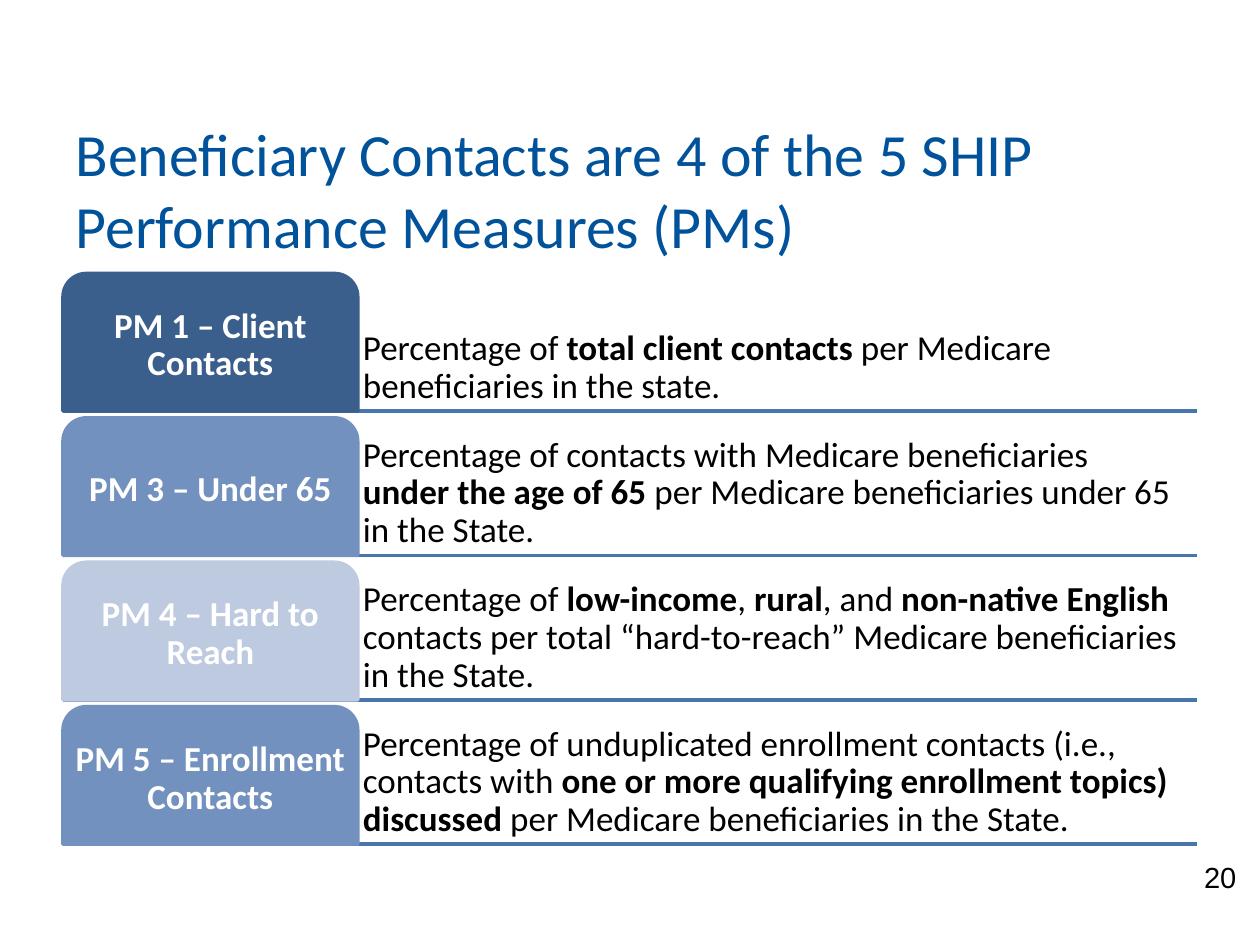
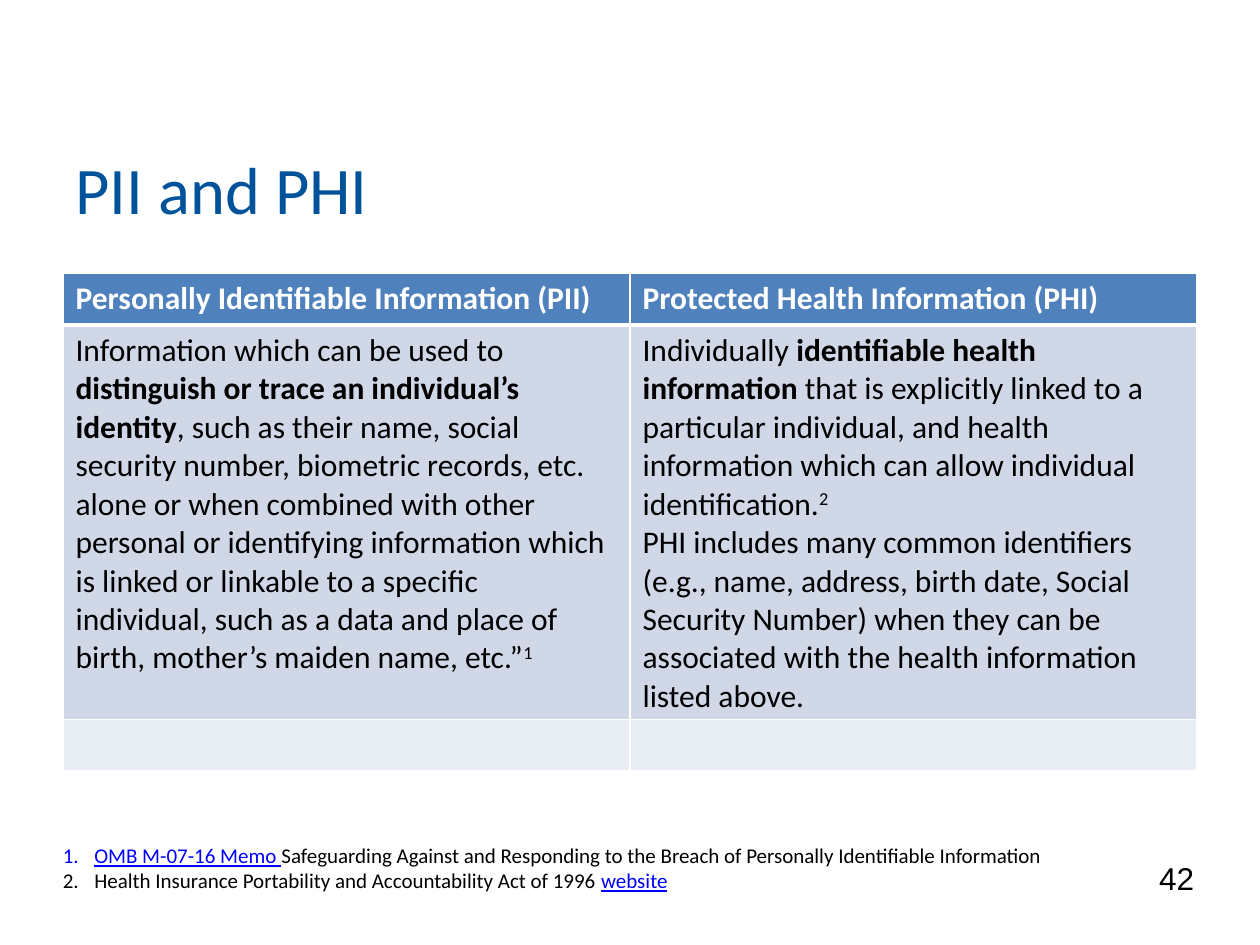
import dataclasses
import pptx
import pptx.util
import pptx.dml.color
import pptx.enum.shapes
import pptx.enum.text
import pptx.oxml.ns
import lxml.etree

RGB = pptx.dml.color.RGBColor
Inch = pptx.util.Inches
Align = pptx.enum.text.PP_ALIGN
Anchor = pptx.enum.text.MSO_ANCHOR
Kind = pptx.enum.shapes.MSO_SHAPE

BLACK = RGB(0x00, 0x00, 0x00)
WHITE = RGB(0xFF, 0xFF, 0xFF)
TITLE = RGB(0x00, 0x52, 0x9B)
RULE = RGB(0x48, 0x75, 0xAC)
DARK = RGB(0x3A, 0x5F, 0x8C)
MID = RGB(0x73, 0x91, 0xBF)
PALE = RGB(0xBE, 0xCA, 0xDF)
HEAD = RGB(0x4F, 0x81, 0xBD)
BAND = RGB(0xD0, 0xD8, 0xE8)
FAINT = RGB(0xE9, 0xED, 0xF4)
LINK = RGB(0x00, 0x00, 0xFF)
BODY = "Calibri"
PLAIN = "Arial"

GOALS = [
    ("PM 1 – Client Contacts", DARK,
     "Percentage of |*total client contacts |per Medicare beneficiaries in the state."),
    ("PM 3 – Under 65", MID,
     "Percentage of contacts with Medicare beneficiaries |\n|*under the age of 65"
     "| per Medicare beneficiaries under 65 in the State."),
    ("PM 4 – Hard to Reach", PALE,
     "Percentage of |*low-income|, |*rural|, and |*non-native English "
     "|contacts per total “hard-to-reach” Medicare beneficiaries in the State."),
    ("PM 5 – Enrollment Contacts", MID,
     "Percentage of unduplicated enrollment contacts (i.e., contacts with "
     "|*one or more qualifying enrollment topics) discussed"
     "| per Medicare beneficiaries in the State."),
]

TERMS = [
    [["*Personally Identifiable Information (PII)"],
     ["*Protected Health Information (PHI)"]],
    [["Information which can be used to |*distinguish or trace an individual’s identity"
      "|, such as their name, social security number, biometric records, etc. alone or when "
      "combined with other personal or identifying information which is linked or linkable "
      "to a specific individual, such as a data and place of birth, mother’s maiden name, "
      "etc.”|^1"],
     ["Individually |*identifiable health information |that is explicitly linked to a "
      "particular individual, and health information which can allow individual "
      "identification.|^2",
      "PHI includes many common identifiers (e.g., name, address, birth date, Social "
      "Security Number) when they can be associated with the health information listed "
      "above."]],
    [[""], [""]],
]

NOTES = [
    "_OMB M-07-16 Memo |Safeguarding Against and Responding to the Breach of "
    "Personally Identifiable Information",
    "Health Insurance Portability and Accountability Act of 1996 |_website",
]


@dataclasses.dataclass
class Box:
    left: float
    top: float
    width: float
    height: float

    def share(self, x, y, w, h):
        return Box(self.left + x * self.width, self.top + y * self.height,
                   w * self.width, h * self.height)

    def place(self):
        return [Inch(v) for v in (self.left, self.top, self.width, self.height)]


PAGE = Box(0, 0, 10, 7.5)
TOP = Box(0.5, 1.16, 9, 0.67)
MAIN = Box(0.5, 2.17, 9, 4.53)
FOOT = Box(0.4, 6.64, 8.05, 0.5)
FOLIO = Box(9.1, 6.77, 0.81, 0.38)


def node(parent, tag, **attrs):
    item = lxml.etree.SubElement(parent, pptx.oxml.ns.qn(tag))
    for key, value in attrs.items():
        item.set(key, str(value))
    return item


def write(para, text, size, color, face=BODY):
    para.font.size = pptx.util.Pt(size)
    for piece in text.split("|"):
        if piece == "\n":
            para.add_line_break()
            continue
        mark = piece[:1] if piece[:1] in ("*", "^", "_") else ""
        run = para.add_run()
        run.text = piece[len(mark):]
        font = run.font
        font.name, font.size = face, pptx.util.Pt(size)
        font.bold = mark == "*"
        font.color.rgb = LINK if mark == "_" else color
        if mark == "_":
            font.underline = True
        if mark == "^":
            run._r.get_or_add_rPr().set("baseline", "30000")


def inset(frame, size, anchor):
    frame.word_wrap = True
    frame.margin_left = frame.margin_right = Inch(size)
    frame.margin_top = frame.margin_bottom = Inch(size)
    frame.vertical_anchor = anchor


def label(slide, box):
    frame = slide.shapes.add_textbox(*box.place()).text_frame
    frame.word_wrap = True
    return frame


def start(deck, title, size, page, folio, align):
    slide = deck.slides.add_slide(deck.slide_layouts[5])
    head = slide.shapes.title
    head.left, head.top, head.width, head.height = TOP.place()
    frame = head.text_frame
    frame.auto_size = pptx.enum.text.MSO_AUTO_SIZE.NONE
    frame.vertical_anchor = Anchor.MIDDLE
    para = frame.paragraphs[0]
    para.alignment = Align.LEFT
    write(para, title, size, TITLE)
    para = label(slide, FOLIO).paragraphs[0]
    para.alignment = align
    write(para, page, folio, BLACK, PLAIN)
    return slide


def rule(slide, box):
    y = Inch(box.top + box.height)
    line = slide.shapes.add_connector(
        pptx.enum.shapes.MSO_CONNECTOR.STRAIGHT,
        Inch(box.left), y, Inch(box.left + box.width), y)
    line.line.color.rgb = RULE
    line.line.width = pptx.util.Pt(2)
    node(line._element.spPr, "a:effectLst")


def goal(slide, box, name, fill, text):
    split = 0.26
    rule(slide, box)
    frame = label(slide, box.share(split, 0, 1 - split, 1))
    inset(frame, 0.04, Anchor.BOTTOM)
    para = frame.paragraphs[0]
    para.line_spacing = 0.9
    write(para, text, 20, BLACK)
    tab = slide.shapes.add_shape(Kind.ROUND_2_SAME_RECTANGLE,
                                 *box.share(0, 0, split, 1).place())
    tab.shadow.inherit = False
    tab.adjustments[0] = 0.17
    tab.fill.solid()
    tab.fill.fore_color.rgb = tab.line.color.rgb = fill
    tab.line.width = pptx.util.Pt(2)
    inset(tab.text_frame, 0.04, Anchor.MIDDLE)
    para = tab.text_frame.paragraphs[0]
    para.alignment = Align.CENTER
    para.line_spacing = 0.9
    write(para, "*" + name, 20, WHITE)


def goals(slide, box):
    gap = 0.012
    high = (1 - gap * (len(GOALS) - 1)) / len(GOALS)
    for i, item in enumerate(GOALS):
        goal(slide, box.share(0, i * (high + gap), 1, high), *item)


def border(cell, base):
    props = cell._tc.get_or_add_tcPr()
    for i, (side, wide) in enumerate(zip("LRTB", (1, 1, 1, base))):
        edge = lxml.etree.Element(pptx.oxml.ns.qn("a:ln" + side))
        edge.set("w", str(pptx.util.Pt(wide)))
        node(node(edge, "a:solidFill"), "a:srgbClr", val=WHITE)
        props.insert(i, edge)


def terms(slide, box):
    rows = (0.41, 3.13, 0.41)
    grid = slide.shapes.add_table(
        len(TERMS), 2, *box.share(0, 0, 1, sum(rows) / box.height).place()).table
    for col in grid.columns:
        col.width = Inch(box.width / 2)
    for r, (fill, color) in enumerate(((HEAD, WHITE), (BAND, BLACK), (FAINT, BLACK))):
        grid.rows[r].height = Inch(rows[r])
        for c, texts in enumerate(TERMS[r]):
            cell = grid.cell(r, c)
            cell.fill.solid()
            cell.fill.fore_color.rgb = fill
            border(cell, 3 if r == 0 else 1)
            frame = cell.text_frame
            for i, text in enumerate(texts):
                para = frame.add_paragraph() if i else frame.paragraphs[0]
                write(para, text, 18, color)


def notes(slide, box):
    frame = label(slide, box)
    for i, text in enumerate(NOTES):
        para = frame.add_paragraph() if i else frame.paragraphs[0]
        write(para, text, 12, BLACK)
        props = para._p.get_or_add_pPr()
        props.set("marL", str(Inch(0.25)))
        props.set("indent", str(-Inch(0.25)))
        mark = lxml.etree.Element(pptx.oxml.ns.qn("a:buAutoNum"))
        mark.set("type", "arabicPeriod")
        props.insert(0, mark)


def main():
    deck = pptx.Presentation()
    deck.slide_width, deck.slide_height = Inch(PAGE.width), Inch(PAGE.height)
    slide = start(deck, "Beneficiary Contacts are 4 of the 5 SHIP Performance Measures (PMs)",
                  34.2, "20", 16.6, Align.RIGHT)
    goals(slide, MAIN)
    slide = start(deck, "PII and PHI", 38, "42", 18, Align.LEFT)
    terms(slide, MAIN)
    notes(slide, FOOT)
    deck.save("out.pptx")


if __name__ == "__main__":
    main()
